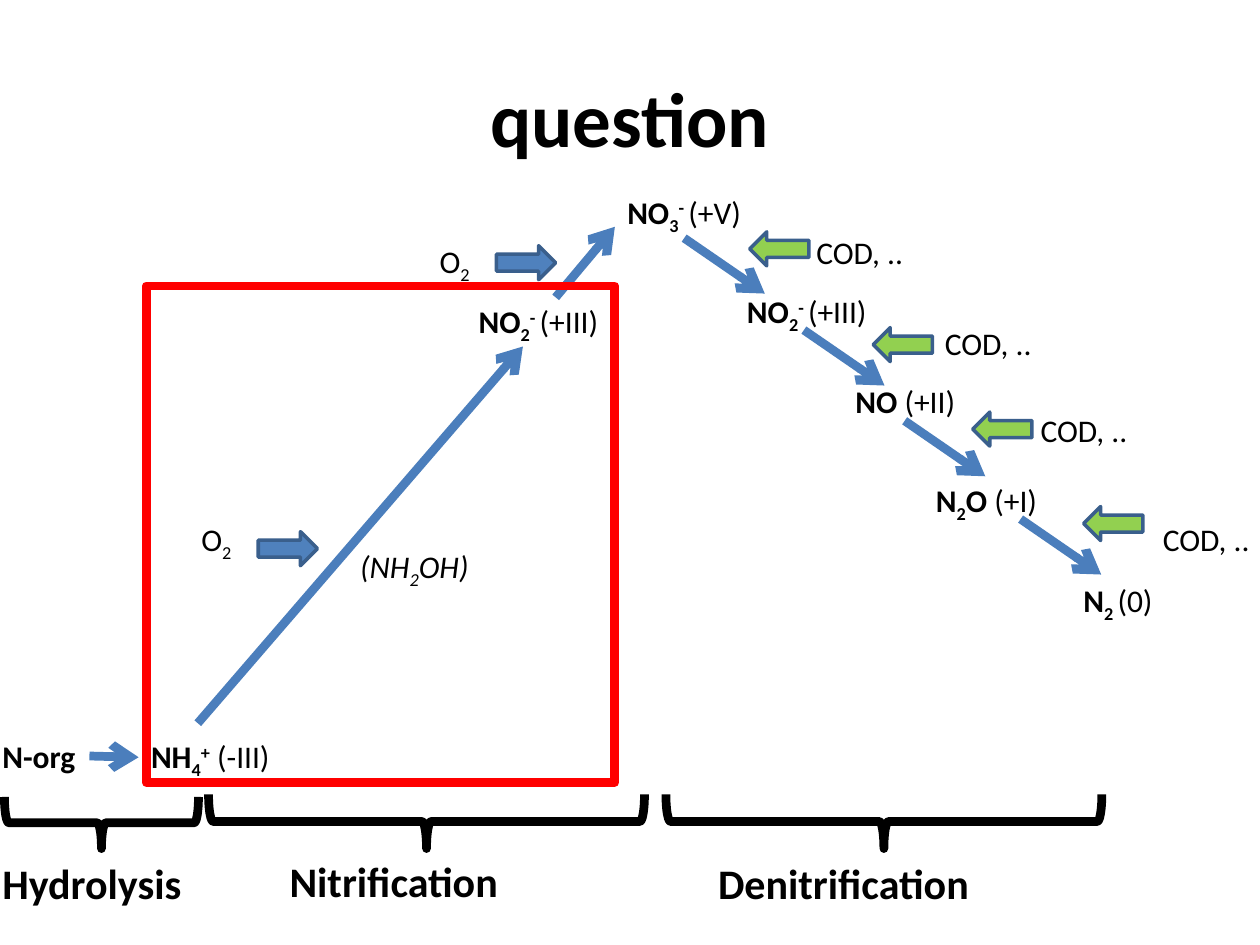
import pptx
import pptx.util
import pptx.dml.color
import pptx.enum.shapes
import pptx.enum.text
import pptx.oxml
import pptx.oxml.ns
import lxml.etree

Inches = pptx.util.Inches
Pt = pptx.util.Pt
RGBColor = pptx.dml.color.RGBColor
Shape = pptx.enum.shapes.MSO_SHAPE

BLACK = RGBColor(0x00, 0x00, 0x00)
BLUE = RGBColor(0x4F, 0x81, 0xBD)
STEEL = RGBColor(0x4B, 0x7E, 0xBC)
NAVY = RGBColor(0x3A, 0x5F, 0x8C)
GREEN = RGBColor(0x92, 0xD0, 0x50)
RED = RGBColor(0xFF, 0x00, 0x00)
SHIFT = {"_": "-25000", "^": "30000"}


class Chart:
    font = "Calibri"
    body = 18
    head = 24
    line = 5

    def __init__(self, deck):
        self.slide = deck.slides.add_slide(deck.slide_layouts[5])
        self.shapes = self.slide.shapes

    def style(self, para, size, bold=None, slant=None):
        para.font.name = self.font
        para.font.size = Pt(size)
        para.font.color.rgb = BLACK
        para.font.bold = bold
        para.font.italic = slant

    def title(self, text):
        box = self.shapes.title
        box.left, box.top = Inches(0.5), Inches(0.3)
        box.width, box.height = Inches(9), Inches(1.25)
        box.text_frame.text = text
        box.text_frame.vertical_anchor = pptx.enum.text.MSO_ANCHOR.MIDDLE
        para = box.text_frame.paragraphs[0]
        para.alignment = pptx.enum.text.PP_ALIGN.CENTER
        self.style(para, 44, True)

    def text(self, x, y, parts, tail="", bold=False, slant=False,
             size=body, wide=1.18, high=0.4):
        box = self.shapes.add_textbox(
            Inches(x), Inches(y), Inches(wide), Inches(high))
        frame = box.text_frame
        frame.word_wrap = True
        frame.auto_size = pptx.enum.text.MSO_AUTO_SIZE.SHAPE_TO_FIT_TEXT
        para = frame.paragraphs[0]
        self.style(para, size, None if tail else bold, slant)
        for part in parts:
            run = para.add_run()
            run.text = part.lstrip("_^")
            if part[0] in SHIFT:
                run.font._element.set("baseline", SHIFT[part[0]])
            if tail:
                run.font.bold = bold
        if tail:
            run = para.add_run()
            run.text = tail
            run.font.bold = False

    def shape(self, kind, x, y, wide, high, line, width=line, fill=None, turn=0):
        item = self.shapes.add_shape(
            kind, Inches(x), Inches(y), Inches(wide), Inches(high))
        item.shadow.inherit = False
        item.rotation = turn
        item.line.color.rgb = line
        item.line.width = Pt(width)
        if fill is None:
            item.fill.background()
        else:
            item.fill.solid()
            item.fill.fore_color.rgb = fill

    def block(self, x, y, fill, turn=0):
        self.shape(Shape.RIGHT_ARROW, x, y, 0.47, 0.27, NAVY, 2, fill, turn)

    def brace(self, x, y, wide, high):
        self.shape(Shape.RIGHT_BRACE, x, y, wide, high, BLACK, turn=90)

    def arrow(self, x1, y1, x2, y2):
        link = self.shapes.add_connector(
            pptx.enum.shapes.MSO_CONNECTOR.STRAIGHT,
            Inches(x1), Inches(y1), Inches(x2), Inches(y2))
        link.line.color.rgb = STEEL
        link.line.width = Pt(self.line)
        tip = lxml.etree.SubElement(
            link.line._get_or_add_ln(), pptx.oxml.ns.qn("a:tailEnd"))
        tip.set("type", "arrow")
        lxml.etree.SubElement(
            link._element.spPr, pptx.oxml.ns.qn("a:effectLst"))


def main():
    deck = pptx.Presentation()
    deck.slide_width, deck.slide_height = Inches(10), Inches(7.5)
    chart = Chart(deck)
    chart.title("question")

    for x, y, parts, tail in (
        (-0.08, 5.8, ["N-org"], ""),
        (1.1, 5.8, ["NH", "_4", "^+"], " (-III)"),
        (3.7, 2.35, ["NO", "_2", "^- "], "(+III)"),
        (5.83, 2.27, ["NO", "_2", "^- "], "(+III)"),
        (6.69, 2.98, ["NO "], "(+II)"),
        (7.33, 3.77, ["N", "_2", "O"], " (+I)"),
        (8.5, 4.56, ["N", "_2 "], "(0)"),
    ):
        chart.text(x, y, parts, tail, bold=True)
    chart.text(4.88, 1.48, ["NO", "_3", "^- "], "(+V)", bold=True, wide=1.42)
    chart.text(2.76, 4.29, ["(NH", "_2", "OH)"], slant=True)

    for ends in (
        (0.71, 6, 1.1, 6.01),
        (1.57, 5.74, 4.15, 2.75),
        (4.41, 2.36, 4.88, 1.8),
    ):
        chart.arrow(*ends)
    for x, y in ((5.43, 1.89), (6.38, 2.62), (7.18, 3.34), (8.1, 4.12)):
        chart.arrow(x, y, x + 0.64, y + 0.44)

    for x, y, left, top in ((1.5, 4.08, 2.05, 4.22), (3.39, 1.87, 3.94, 1.95)):
        chart.text(x, y, ["O", "_2"])
        chart.block(left, top, BLUE)
    for x, y, left, top in (
        (6.38, 1.8, 5.95, 1.84),
        (7.4, 2.52, 6.93, 2.6),
        (8.16, 3.21, 7.72, 3.27),
        (9.13, 4.08, 8.6, 4.02),
    ):
        chart.text(x, y, ["COD, .."])
        chart.block(left, top, GREEN, 180)

    for name, x, y, wide, brace in (
        ("Hydrolysis", -0.08, 6.76, 2.84, (0.6, 5.76, 0.41, 1.54)),
        ("Nitrification", 2.2, 6.74, 2.84, (3.17, 4.79, 0.43, 3.46)),
        ("Denitrification", 5.6, 6.76, 4.09, (6.8, 4.79, 0.43, 3.46)),
    ):
        chart.text(x, y, [name], bold=True, size=chart.head, wide=wide, high=0.5)
        chart.brace(*brace)
    chart.shape(Shape.RECTANGLE, 1.16, 2.27, 3.72, 3.94, RED)

    deck.save("out.pptx")


if __name__ == "__main__":
    main()
